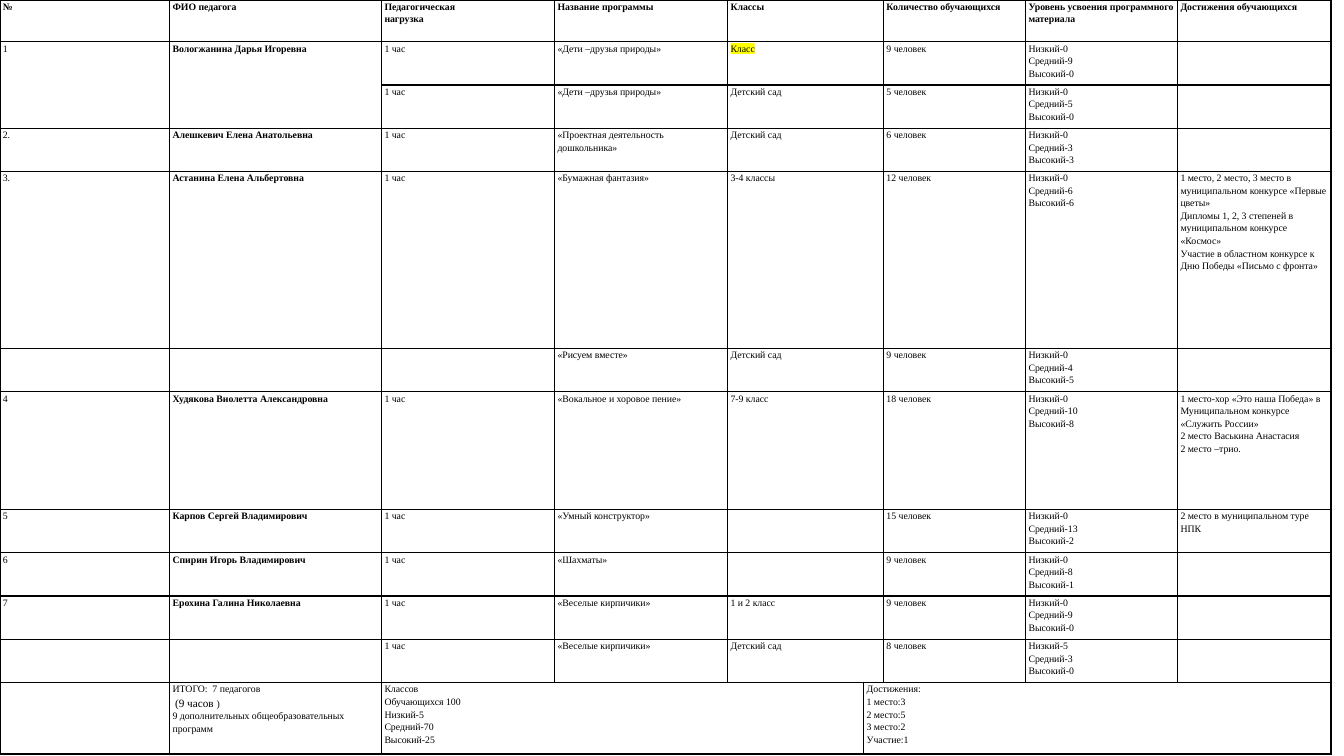
import pptx
import pptx.util
import pptx.dml.color
import pptx.oxml
import pptx.oxml.ns
from pptx.util import Cm, Pt

BLACK = pptx.dml.color.RGBColor(0x00, 0x00, 0x00)
YELLOW = pptx.dml.color.RGBColor(0xFF, 0xFF, 0x00)

# Content: number, teacher, load, programme, classes, pupils, levels, achievements
headings = ("№", "ФИО педагога", "Педагогическая\nнагрузка", "Название программы", "Классы",
            "Количество обучающихся", "Уровень усвоения программного материала",
            "Достижения обучающихся")
programmes = [
    ("1", "Вологжанина Дарья Игоревна", "1 час", "«Дети –друзья природы»", "Класс",
     9, (0, 9, 0), ""),
    ("", "", "1 час", "«Дети –друзья природы»", "Детский сад", 5, (0, 5, 0), ""),
    ("2.", "Алешкевич Елена Анатольевна", "1 час", "«Проектная деятельность дошкольника»",
     "Детский сад", 6, (0, 3, 3), ""),
    ("3.", "Астанина Елена Альбертовна", "1 час", "«Бумажная фантазия»", "3-4 классы",
     12, (0, 6, 6),
     "1 место, 2 место, 3 место в муниципальном конкурсе «Первые цветы»\n"
     "Дипломы 1, 2, 3 степеней в муниципальном конкурсе «Космос»\n"
     "Участие в областном конкурсе к Дню Победы «Письмо с фронта»"),
    ("", "", "", "«Рисуем вместе»", "Детский сад", 9, (0, 4, 5), ""),
    ("4", "Худякова Виолетта Александровна", "1 час", "«Вокальное и хоровое пение»",
     "7-9 класс", 18, (0, 10, 8),
     "1 место-хор «Это наша Победа» в Муниципальном конкурсе «Служить России»\n"
     "2 место Васькина Анастасия\n2 место –трио."),
    ("5", "Карпов Сергей Владимирович", "1 час", "«Умный конструктор»", "",
     15, (0, 13, 2), "2 место в муниципальном туре НПК"),
    ("6", "Спирин Игорь Владимирович", "1 час", "«Шахматы»", "", 9, (0, 8, 1), ""),
    ("7", "Ерохина Галина Николаевна", "1 час", "«Веселые кирпичики»", "1 и 2 класс",
     9, (0, 9, 0), ""),
    ("", "", "1 час", "«Веселые кирпичики»", "Детский сад", 8, (5, 3, 0), ""),
]
totals = {
    1: "ИТОГО:  7 педагогов\n (9 часов )\n9 дополнительных общеобразовательных программ",
    2: "Классов\nОбучающихся 100\nНизкий-5\nСредний-70\nВысокий-25",
    5: "Достижения:\n1 место:3\n2 место:5\n3 место:2\nУчастие:1",
}
larger_text = "(9 часов "
marked_text = "Класс"

# Layout and formats
column_widths = (4.28, 5.34, 4.36, 4.36, 3.43, 0.5, 3.58, 3.83, 3.86)
row_heights = [1.05] + [1.09] * 10 + [1.8]
row_heights[4], row_heights[6] = 4.46, 2.97
content_columns = (0, 1, 2, 3, 4, 6, 7, 8)
last_row = len(row_heights) - 1
merges = [((row, 4), (row, 5)) for row in range(last_row)]
merges += [((1, 0), (2, 0)), ((1, 1), (2, 1)),
           ((last_row, 2), (last_row, 4)), ((last_row, 5), (last_row, 8))]
cell_format = {"margin_left": Cm(0.07), "margin_right": Cm(0.07),
               "margin_top": 0, "margin_bottom": 0}
text_format = {"name": "Times New Roman", "size": Pt(7)}


def add_borders(cell):
    properties = cell._tc.get_or_add_tcPr()
    for position, side in enumerate("LRTB"):
        border = pptx.oxml.parse_xml(
            f'<a:ln{side} {pptx.oxml.ns.nsdecls("a")} w="12700"><a:solidFill>'
            f'<a:srgbClr val="{BLACK}"/></a:solidFill></a:ln{side}>')
        properties.insert(position, border)


def highlight(run):
    mark = pptx.oxml.parse_xml(
        f'<a:highlight {pptx.oxml.ns.nsdecls("a")}><a:srgbClr val="{YELLOW}"/></a:highlight>')
    run.font._element.find(pptx.oxml.ns.qn("a:solidFill")).addnext(mark)


def write(cell, text, bold):
    for index, line in enumerate(text.split("\n")):
        frame = cell.text_frame
        paragraph = frame.add_paragraph() if index else frame.paragraphs[0]
        paragraph.line_spacing = 1.15
        for part in filter(None, line.partition(larger_text)):
            run = paragraph.add_run()
            run.text = part
            for name, value in text_format.items():
                setattr(run.font, name, value)
            run.font.bold = bold
            run.font.color.rgb = BLACK
            if part == larger_text:
                run.font.size = Pt(8)
            if part == marked_text:
                highlight(run)


# Slide and empty grid
deck = pptx.Presentation()
deck.slide_width, deck.slide_height = Cm(33.87), Cm(19.05)
slide = deck.slides.add_slide(deck.slide_layouts[6])
report = slide.shapes.add_table(len(row_heights), len(column_widths), 0, 0,
                                Cm(sum(column_widths)), Cm(sum(row_heights))).table
report.first_row = report.horz_banding = False
for column, width in zip(report.columns, column_widths):
    column.width = Cm(width)
for row, height in zip(report.rows, row_heights):
    row.height = Cm(height)
for cell in report.iter_cells():
    for name, value in cell_format.items():
        setattr(cell, name, value)
    cell.fill.background()
    add_borders(cell)
for first, last in merges:
    report.cell(*first).merge(report.cell(*last))

# Headings, programmes and totals
rows = [dict(zip(content_columns, headings))]
for *start, pupils, levels, achievements in programmes:
    mastery = "\n".join(f"{level}-{count}" for level, count
                        in zip(("Низкий", "Средний", "Высокий"), levels))
    rows.append(dict(zip(content_columns,
                         (*start, f"{pupils} человек", mastery, achievements))))
rows.append(totals)
for row, texts in enumerate(rows):
    for column, text in texts.items():
        if text:
            bold = row == 0 or (column == 1 and row < last_row)
            write(report.cell(row, column), text, bold)

deck.save("out.pptx")
